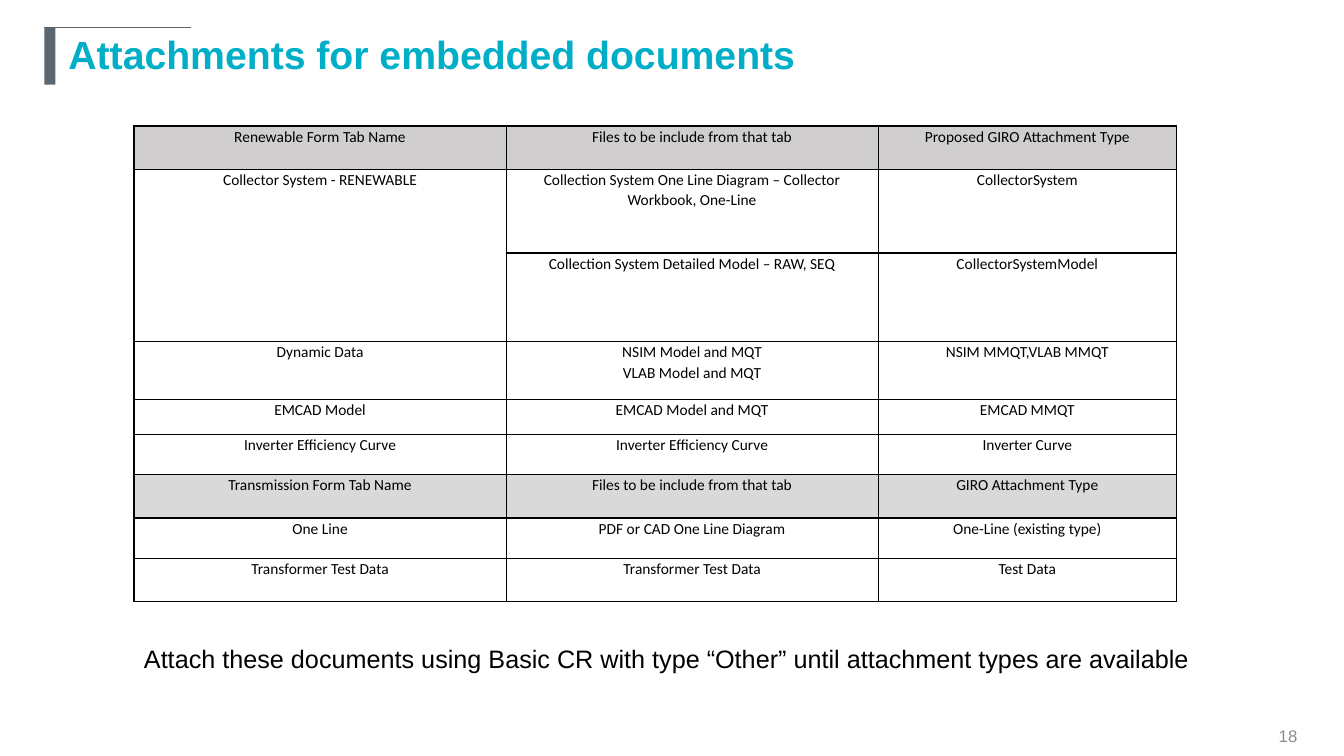
from lxml.etree import SubElement
from pptx import Presentation
from pptx.dml.color import RGBColor
from pptx.enum.shapes import MSO_CONNECTOR, MSO_SHAPE
from pptx.enum.text import MSO_ANCHOR, PP_ALIGN
from pptx.oxml.ns import qn
from pptx.util import Inches, Pt

SLATE, TEAL, BLACK, GRAY = "5B6770", "00AEC7", "000000", "8C8C8C"
COLUMN_WIDTHS = [3.69, 3.69, 2.96]
# Row height, fill, cell texts; None continues the cell above
ATTACHMENT_ROWS = [
    (0.43, "D0CECE", ["Renewable Form Tab Name", "Files to be include from that tab",
                      "Proposed GIRO Attachment Type"]),
    (0.83, None, ["Collector System - RENEWABLE",
                  "Collection System One Line Diagram – Collector Workbook, One-Line",
                  "CollectorSystem"]),
    (0.88, None, [None, "Collection System Detailed Model – RAW, SEQ", "CollectorSystemModel"]),
    (0.57, None, ["Dynamic Data", "NSIM Model and MQT\nVLAB Model and MQT",
                  "NSIM MMQT,VLAB MMQT"]),
    (0.35, None, ["EMCAD Model", "EMCAD Model and MQT", "EMCAD MMQT"]),
    (0.40, None, ["Inverter Efficiency Curve", "Inverter Efficiency Curve", "Inverter Curve"]),
    (0.43, "D9D9D9", ["Transmission Form Tab Name", "Files to be include from that tab",
                      "GIRO Attachment Type"]),
    (0.40, None, ["One Line", "PDF or CAD One Line Diagram", "One-Line (existing type)"]),
    (0.43, None, ["Transformer Test Data", "Transformer Test Data", "Test Data"]),
]


def rgb(value):
    return RGBColor.from_string(value)


def style(paragraph, size, color, font="Arial", bold=False, align=PP_ALIGN.LEFT):
    paragraph.alignment = align
    paragraph.font.name = font
    paragraph.font.size = Pt(size)
    paragraph.font.bold = bold
    paragraph.font.color.rgb = rgb(color)


def add_text(slide, box, text, size, color, anchor=MSO_ANCHOR.TOP, wrap=True, **options):
    frame = slide.shapes.add_textbox(*map(Inches, box)).text_frame
    frame.word_wrap = wrap
    frame.vertical_anchor = anchor
    frame.text = text
    style(frame.paragraphs[0], size, color, **options)


def add_heading(slide, left, top, width):
    # Corner accent: bar and thin rule
    bar = slide.shapes.add_shape(MSO_SHAPE.RECTANGLE, Inches(left), Inches(top),
                                 Inches(0.11), Inches(0.57))
    bar.shadow.inherit = False
    bar.fill.solid()
    bar.fill.fore_color.rgb = rgb(SLATE)
    bar.line.fill.background()
    rule = slide.shapes.add_connector(MSO_CONNECTOR.STRAIGHT, Inches(left), Inches(top),
                                      Inches(left + 1.45), Inches(top))
    rule.line.color.rgb = rgb(SLATE)
    rule.line.width = Pt(0.75)
    SubElement(rule._element.spPr, qn("a:effectLst"))
    # Title
    add_text(slide, (left + 0.14, top - 0.02, width - 0.14, 0.73),
             "Attachments for embedded documents", 28, TEAL, bold=True)


def add_borders(cell):
    properties = cell._tc.get_or_add_tcPr()
    for side in ("lnL", "lnR", "lnT", "lnB"):
        border = SubElement(properties, qn(f"a:{side}"), w=str(Pt(1)))
        fill = SubElement(border, qn("a:solidFill"))
        SubElement(fill, qn("a:srgbClr"), val=BLACK)


def fill_cell(cell, text, fill):
    add_borders(cell)
    if fill:
        cell.fill.solid()
        cell.fill.fore_color.rgb = rgb(fill)
    else:
        cell.fill.background()
    cell.margin_left = cell.margin_right = Inches(0.07)
    cell.margin_top = cell.margin_bottom = 0
    cell.text = text or ""
    for paragraph in cell.text_frame.paragraphs:
        style(paragraph, 11, BLACK, font="Calibri", align=PP_ALIGN.CENTER)
        paragraph.line_spacing = 1.07


def add_attachment_table(slide, left, top):
    width = sum(COLUMN_WIDTHS)
    height = sum(row[0] for row in ATTACHMENT_ROWS)
    table = slide.shapes.add_table(len(ATTACHMENT_ROWS), len(COLUMN_WIDTHS), Inches(left),
                                   Inches(top), Inches(width), Inches(height)).table
    table.first_row = table.horz_banding = False
    for column, column_width in zip(table.columns, COLUMN_WIDTHS):
        column.width = Inches(column_width)
    for r, (row_height, fill, texts) in enumerate(ATTACHMENT_ROWS):
        table.rows[r].height = Inches(row_height)
        for c, text in enumerate(texts):
            fill_cell(table.cell(r, c), text, fill)
            if text is None:
                table.cell(r - 1, c).merge(table.cell(r, c))


def add_footer(slide, left, top):
    # Instruction under the table
    add_text(slide, (left, top, 10.66, 0.4),
             "Attach these documents using Basic CR with type “Other” "
             "until attachment types are available", 18, BLACK, wrap=False)
    # Page number
    add_text(slide, (left + 11, top + 0.81, 0.89, 0.32), "18", 12, GRAY,
             anchor=MSO_ANCHOR.MIDDLE, align=PP_ALIGN.CENTER)


def main():
    deck = Presentation()
    deck.slide_width, deck.slide_height = Inches(13.33), Inches(7.5)
    slide = deck.slides.add_slide(deck.slide_layouts[6])
    add_heading(slide, 0.44, 0.27, 10.89)
    add_attachment_table(slide, 1.33, 1.25)
    add_footer(slide, 1.33, 6.33)
    deck.save("out.pptx")


if __name__ == "__main__":
    main()
